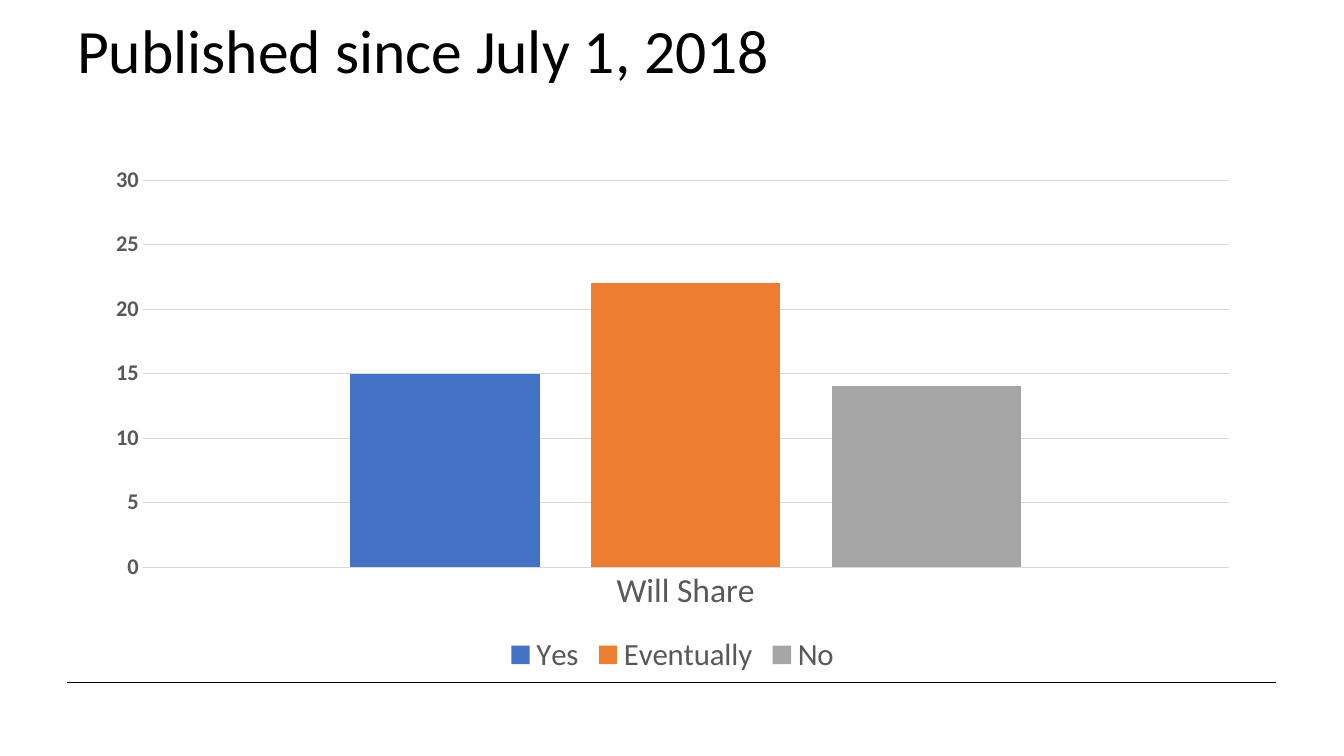
"""Build the slide showing data sharing plans as a column chart."""
import pptx
import pptx.chart.data
import pptx.dml.color
import pptx.enum.chart
import pptx.enum.shapes
import pptx.enum.text
import pptx.oxml
import pptx.oxml.ns
import pptx.util

HEADING = "Published since July 1, 2018"
CATEGORY = "Will Share"
ANSWERS = [("Yes", 15, "4472C4"), ("Eventually", 22, "ED7D31"), ("No", 14, "A5A5A5")]

FONT = "Calibri"
BLACK, GREY, PALE = "000000", "595959", "D9D9D9"
SLIDE_SIZE = (1344, 756)
HEADING_BOX = (67, 15, 1210, 141)
CHART_BOX = (93, 156, 1159, 524)
RULE_ENDS = (67, 682, 1276, 682)


def px(*lengths):
    return [pptx.util.Emu(round(length * 914400 / 100.8)) for length in lengths]


def color(value):
    return pptx.dml.color.RGBColor.from_string(value)


def set_font(font, size, value, bold=False):
    font.name = FONT
    font.size = pptx.util.Pt(size)
    font.bold = bold
    font.color.rgb = color(value)


def set_line(line, value, width):
    line.color.rgb = color(value)
    line.width = pptx.util.Pt(width)


def add_rule(slide):
    rule = slide.shapes.add_connector(pptx.enum.shapes.MSO_CONNECTOR.STRAIGHT, *px(*RULE_ENDS))
    set_line(rule.line, BLACK, 0.25)
    properties = rule.element.find(pptx.oxml.ns.qn("p:spPr"))
    properties.append(pptx.oxml.parse_xml(f"<a:effectLst {pptx.oxml.ns.nsdecls('a')}/>"))


def add_heading(slide):
    heading = slide.shapes.title
    heading.left, heading.top, heading.width, heading.height = px(*HEADING_BOX)
    frame = heading.text_frame
    frame.text = HEADING
    frame.word_wrap = True
    frame.auto_size = pptx.enum.text.MSO_AUTO_SIZE.NONE
    frame.vertical_anchor = pptx.enum.text.MSO_ANCHOR.TOP
    paragraph = frame.paragraphs[0]
    paragraph.alignment = pptx.enum.text.PP_ALIGN.LEFT
    paragraph.line_spacing = 0.9
    set_font(paragraph.runs[0].font, 44, BLACK)


def add_answers(slide):
    data = pptx.chart.data.CategoryChartData()
    data.categories = [CATEGORY]
    for name, count, _ in ANSWERS:
        data.add_series(name, [count])
    kinds = pptx.enum.chart
    chart = slide.shapes.add_chart(
        kinds.XL_CHART_TYPE.COLUMN_CLUSTERED, *px(*CHART_BOX), data).chart
    set_font(chart.font, 10, BLACK)
    chart.has_title = False

    plot = chart.plots[0]
    plot.gap_width, plot.overlap = 219, -27
    plot.vary_by_categories = False
    for series, (_, _, fill) in zip(plot.series, ANSWERS):
        series.format.fill.solid()
        series.format.fill.fore_color.rgb = color(fill)

    choices, counts = chart.category_axis, chart.value_axis
    for axis in (choices, counts):
        axis.major_tick_mark = axis.minor_tick_mark = kinds.XL_TICK_MARK.NONE
    set_font(choices.tick_labels.font, 24, GREY)
    set_line(choices.format.line, PALE, 0.75)
    set_font(counts.tick_labels.font, 16, GREY, bold=True)
    counts.format.line.fill.background()
    counts.minimum_scale, counts.maximum_scale, counts.major_unit = 0, 30, 5
    set_line(counts.major_gridlines.format.line, PALE, 0.75)

    chart.has_legend = True
    chart.legend.position = kinds.XL_LEGEND_POSITION.BOTTOM
    chart.legend.include_in_layout = False
    set_font(chart.legend.font, 22, GREY)


def main():
    deck = pptx.Presentation()
    deck.slide_width, deck.slide_height = px(*SLIDE_SIZE)
    slide = deck.slides.add_slide(deck.slide_layouts.get_by_name("Title Only"))
    add_rule(slide)
    add_heading(slide)
    add_answers(slide)
    deck.save("out.pptx")


if __name__ == "__main__":
    main()
